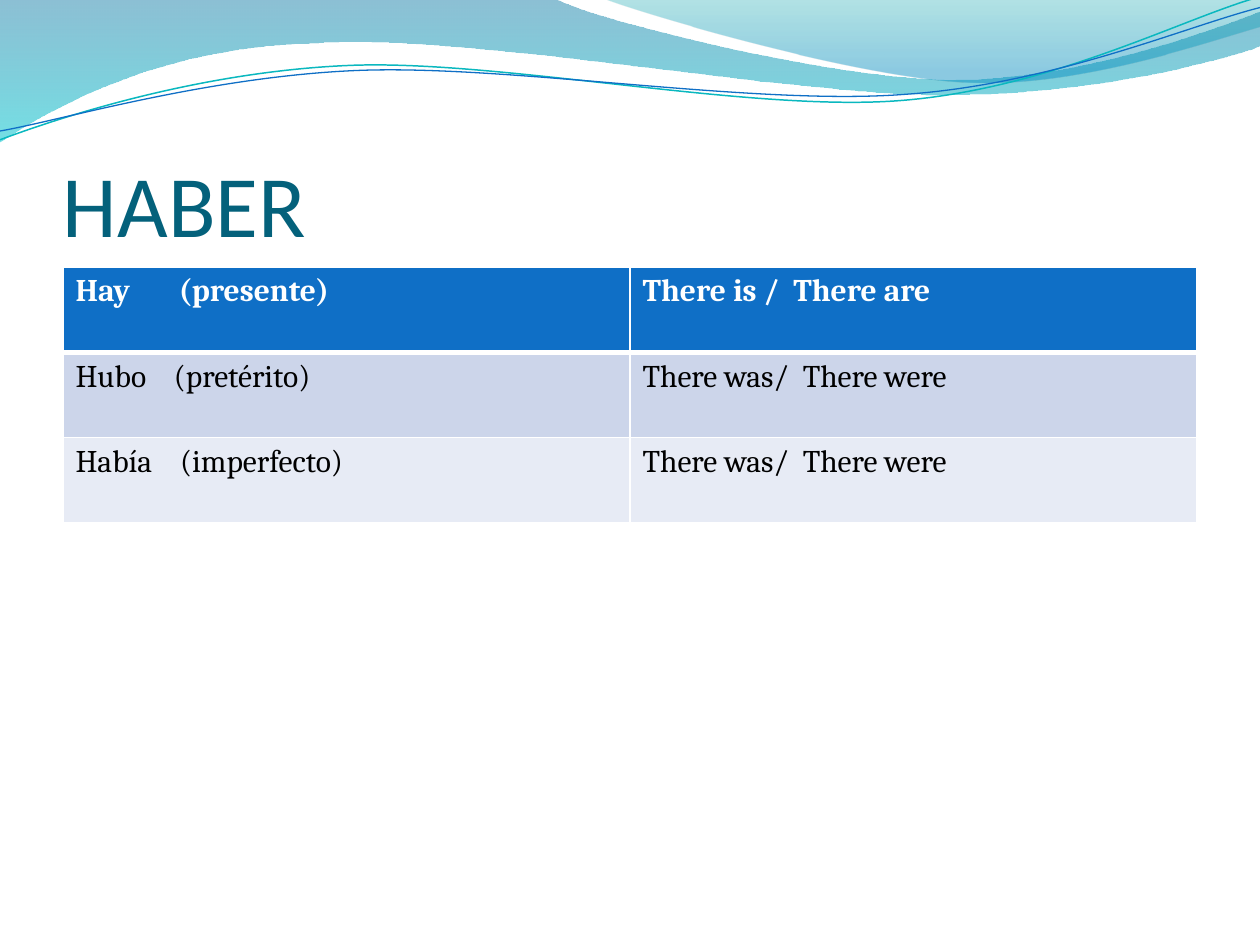
import lxml.etree
import pptx
import pptx.dml.color
import pptx.enum.text
import pptx.oxml.ns
import pptx.util
from pptx.util import Inches

theme = {
    "title": "04617B", "header": "0F6FC6", "white": "FFFFFF", "black": "000000",
    "rows": ["0F6FC6", "CCD5EA", "E7EBF5"],
    "heading_font": "Calibri", "body_font": "Cambria",
    "heading_size": 50, "body_size": 18,
}
rgb = pptx.dml.color.RGBColor.from_string
qn = pptx.oxml.ns.qn


def write(frame, text, font, size, color, bold=False):
    run = frame.paragraphs[0].add_run()
    run.text = text
    run.font.name = font
    run.font.size = pptx.util.Pt(size)
    run.font.bold = bold
    run.font.color.rgb = rgb(color)


def draw_curve(shapes, start, segments, close):
    points = [pair for segment in segments for pair in zip(segment[::2], segment[1::2])]
    builder = shapes.build_freeform(Inches(start[0]), Inches(start[1]))
    builder.add_line_segments([(Inches(x), Inches(y)) for x, y in points], close=close)
    curve = builder.convert_to_shape()
    curve.shadow.inherit = False
    lines = iter(list(curve._element.spPr.iter(qn("a:lnTo"))))
    for segment in segments:
        line = next(lines)
        if len(segment) == 6:
            bend = lxml.etree.Element(qn("a:cubicBezTo"))
            line.addprevious(bend)
            for handle in (line, next(lines), next(lines)):
                bend.append(handle[0])
                handle.getparent().remove(handle)
    return curve


deck = pptx.Presentation()
deck.slide_width, deck.slide_height = Inches(10), Inches(7.5)
slide = deck.slides.add_slide(deck.slide_layouts[6])

waves = [
    ((0, 0), [(4.4, -0.01), (4.76, 0.17, 6.64, 0.63, 7.58, 0.63), (8.53, 0.63, 9.58, 0.26, 10, 0.09),
              (10.01, 0.36), (9.83, 0.44, 8.7, 0.76, 7.46, 0.75), (6.22, 0.75, 3.82, 0.28, 2.57, 0.34),
              (1.29, 0.36, 0.46, 0.83, -0.01, 1.13)],
     [(0, "0074A1", 45), (1, "00C6CF", 55)]),
    ((4.79, -0.01), [(5.09, 0.11, 6.82, 0.62, 7.69, 0.65), (8.56, 0.69, 9.61, 0.32, 10, 0.21), (10, 0)],
     [(0, "00A1A9", 30), (0.8, "008BBF", 45)]),
]
for start, segments, stops in waves:
    wave = draw_curve(slide.shapes, start, segments, close=True)
    wave.line.fill.background()
    wave.fill.gradient()
    wave.fill.gradient_angle = 270
    for stop, (position, color, _) in zip(wave.fill.gradient_stops, stops):
        stop.position = position
        stop.color.rgb = rgb(color)
    for tint, (_, _, opacity) in zip(wave._element.spPr.iter(qn("a:srgbClr")), stops):
        lxml.etree.SubElement(tint, qn("a:alpha"), val=str(opacity * 1000))

strands = [
    ((0, 1.11), [(0.48, 0.93, 1.58, 0.57, 2.77, 0.52), (3.95, 0.47, 5.93, 0.89, 7.13, 0.8),
                 (8.33, 0.71, 9.38, 0.15, 9.98, -0.02)], "0AB8BF", 0.85),
    ((0, 1.04), [(0.47, 0.96, 1.64, 0.61, 2.83, 0.56), (4.03, 0.51, 5.97, 0.84, 7.17, 0.75),
                 (8.36, 0.67, 9.41, 0.21, 10, 0.06)], theme["header"], 0.75),
]
for start, segments, color, width in strands:
    strand = draw_curve(slide.shapes, start, segments, close=False)
    strand.fill.background()
    strand.line.color.rgb = rgb(color)
    strand.line.width = pptx.util.Pt(width)

title = slide.shapes.add_textbox(Inches(0.5), Inches(0.77), Inches(9), Inches(1.25)).text_frame
title.word_wrap = True
title.vertical_anchor = pptx.enum.text.MSO_ANCHOR.BOTTOM
title.margin_left = title.margin_right = title.margin_bottom = 0
title.margin_top = Inches(0.05)
write(title, "HABER", font=theme["heading_font"], size=theme["heading_size"], color=theme["title"])

verb_forms = [
    ("Hay\t(presente)", "There is /  There are", 0.82),
    ("Hubo\t(pretérito)", "There was/  There were", 0.78),
    ("Había\t(imperfecto)", "There was/  There were", 0.83),
]
row_height = Inches(2.03 / 3)
verbs = slide.shapes.add_table(3, 2, Inches(0.5), Inches(2.12), Inches(9), row_height * 3).table
for row, (verb, meaning, tense_stop) in enumerate(verb_forms):
    verbs.rows[row].height = row_height
    header = row == 0
    for column, text in enumerate((verb, meaning)):
        cell = verbs.cell(row, column)
        cell.fill.solid()
        cell.fill.fore_color.rgb = rgb(theme["rows"][row])
        write(cell.text_frame, text, font=theme["body_font"], size=theme["body_size"],
              color=theme["white"] if header else theme["black"], bold=header)
        if column == 0:
            tabs = lxml.etree.SubElement(cell.text_frame.paragraphs[0]._p.get_or_add_pPr(), qn("a:tabLst"))
            lxml.etree.SubElement(tabs, qn("a:tab"), pos=str(Inches(tense_stop)), algn="l")
        edges = {"L": 1, "R": 1, "T": 3 if row == 1 else 1, "B": 3 if header else 1}
        properties = cell._tc.get_or_add_tcPr()
        for place, (side, width) in enumerate(edges.items()):
            edge = lxml.etree.Element(qn("a:ln" + side), w=str(pptx.util.Pt(width)))
            edge_fill = lxml.etree.SubElement(edge, qn("a:solidFill"))
            lxml.etree.SubElement(edge_fill, qn("a:srgbClr"), val=theme["white"])
            properties.insert(place, edge)

deck.save("out.pptx")
